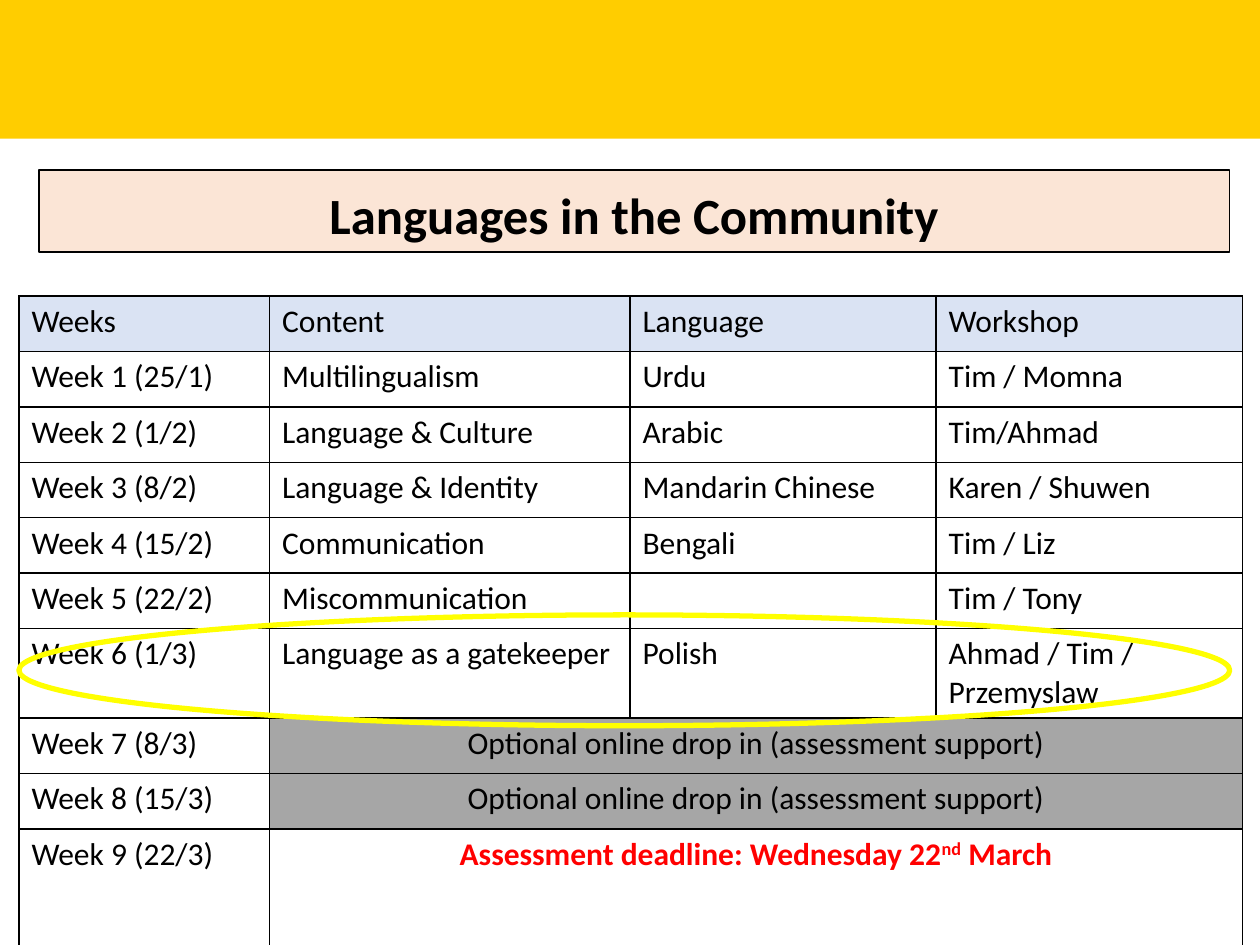
from dataclasses import dataclass
from lxml.etree import SubElement as Sub
from pptx import Presentation
from pptx.dml.color import RGBColor as Rgb
from pptx.enum.shapes import MSO_SHAPE as Shape
from pptx.enum.text import MSO_ANCHOR as Anchor, PP_ALIGN as Align
from pptx.oxml.ns import qn
from pptx.util import Inches, Pt


@dataclass(frozen=True)
class Theme:
    font: str = "Calibri"
    head: int = 29
    body: int = 18
    black: str = "000000"
    gold: str = "FFCD00"
    peach: str = "FBE5D6"
    blue: str = "DAE3F3"
    grey: str = "A6A6A6"
    red: str = "FF0000"
    ring: str = "FFFF00"


class Deck:
    def __init__(self, theme):
        self.theme = theme
        self.show = Presentation()
        self.show.slide_width = Inches(10)
        self.show.slide_height = Inches(7.5)
        self.slide = self.show.slides.add_slide(self.show.slide_layouts[5])

    def place(self, shape, box):
        shape.left, shape.top, shape.width, shape.height = map(Inches, box)

    def paint(self, item, color):
        if color:
            item.fill.solid()
            item.fill.fore_color.rgb = Rgb.from_string(color)
        else:
            item.fill.background()

    def line(self, shape, color, width):
        if color:
            shape.line.color.rgb = Rgb.from_string(color)
            shape.line.width = Pt(width)
        else:
            shape.line.fill.background()

    def style(self, font, size, color, bold=False):
        font.name = self.theme.font
        font.size = Pt(size)
        font.bold = bold
        font.color.rgb = Rgb.from_string(color)

    def shape(self, kind, box, fill=None, line=None, width=1):
        shape = self.slide.shapes.add_shape(kind, *map(Inches, box))
        shape.shadow.inherit = False
        self.paint(shape, fill)
        self.line(shape, line, width)

    def title(self, text, box):
        title = self.slide.shapes.title
        self.place(title, box)
        self.paint(title, self.theme.peach)
        self.line(title, self.theme.black, 0.75)
        frame = title.text_frame
        frame.text = text
        frame.word_wrap = True
        frame.vertical_anchor = Anchor.BOTTOM
        para = frame.paragraphs[0]
        para.alignment = Align.CENTER
        para.line_spacing = 0.9
        self.style(para.runs[0].font, self.theme.head, self.theme.black, True)

    def border(self, cell):
        props = cell._tc.get_or_add_tcPr()
        for side in ("a:lnL", "a:lnR", "a:lnT", "a:lnB"):
            edge = Sub(props, qn(side), w=str(Pt(1)))
            fill = Sub(edge, qn("a:solidFill"))
            Sub(fill, qn("a:srgbClr"), val=self.theme.black)

    def cell(self, cell, parts, fill=None, color=None, bold=False, align=Align.LEFT):
        self.paint(cell, fill)
        para = cell.text_frame.paragraphs[0]
        para.alignment = align
        self.style(para.font, self.theme.body, color or self.theme.black)
        for text, base in parts:
            run = para.add_run()
            run.text = text
            self.style(run.font, self.theme.body, color or self.theme.black, bold)
            if base:
                run._r.get_or_add_rPr().set("baseline", str(base * 1000))

    def table(self, box, cols, high, rows, wide):
        count = len(rows) + len(wide)
        frame = self.slide.shapes.add_table(count, len(cols), *map(Inches, box))
        grid = frame.table
        grid.first_row = grid.horz_banding = False
        for col, width in zip(grid.columns, cols):
            col.width = Inches(width)
        for row, height in zip(grid.rows, high):
            row.height = Inches(height)
        for cell in grid.iter_cells():
            self.border(cell)
        for i, row in enumerate(rows):
            for j, text in enumerate(row):
                fill = None if i else self.theme.blue
                self.cell(grid.cell(i, j), [(text, 0)], fill)
        for i, (week, parts, look) in enumerate(wide, len(rows)):
            self.cell(grid.cell(i, 0), [(week, 0)])
            grid.cell(i, 1).merge(grid.cell(i, len(cols) - 1))
            self.cell(grid.cell(i, 1), parts, align=Align.CENTER, **look)


def main():
    theme = Theme()
    deck = Deck(theme)
    deck.shape(Shape.RECTANGLE, (0, 0, 10, 1.1), theme.gold)
    deck.title("Languages in the Community", (0.31, 1.35, 9.45, 0.65))
    rows = [
        ("Weeks", "Content", "Language", "Workshop"),
        ("Week 1 (25/1)", "Multilingualism", "Urdu", "Tim / Momna"),
        ("Week 2 (1/2)", "Language & Culture", "Arabic", "Tim/Ahmad"),
        ("Week 3 (8/2)", "Language & Identity", "Mandarin Chinese", "Karen / Shuwen"),
        ("Week 4 (15/2)", "Communication", "Bengali", "Tim / Liz"),
        ("Week 5 (22/2)", "Miscommunication", "", "Tim / Tony"),
        ("Week 6 (1/3)", "Language as a gatekeeper", "Polish", "Ahmad / Tim / Przemyslaw"),
    ]
    drop = [("Optional online drop in (assessment support)", 0)]
    due = [("Assessment deadline: Wednesday 22", 0), ("nd", 30), (" March", 0)]
    wide = [
        ("Week 7 (8/3)", drop, {"fill": theme.grey}),
        ("Week 8 (15/3)", drop, {"fill": theme.grey}),
        ("Week 9 (22/3)", due, {"color": theme.red, "bold": True}),
    ]
    high = [0.44] * 9 + [0.96]
    deck.table((0.15, 2.35, 9.71, sum(high)), (1.99, 2.86, 2.43, 2.43), high, rows, wide)
    deck.shape(Shape.OVAL, (0.15, 4.88, 9.61, 0.88), line=theme.ring, width=3)
    deck.show.save("out.pptx")


if __name__ == "__main__":
    main()
